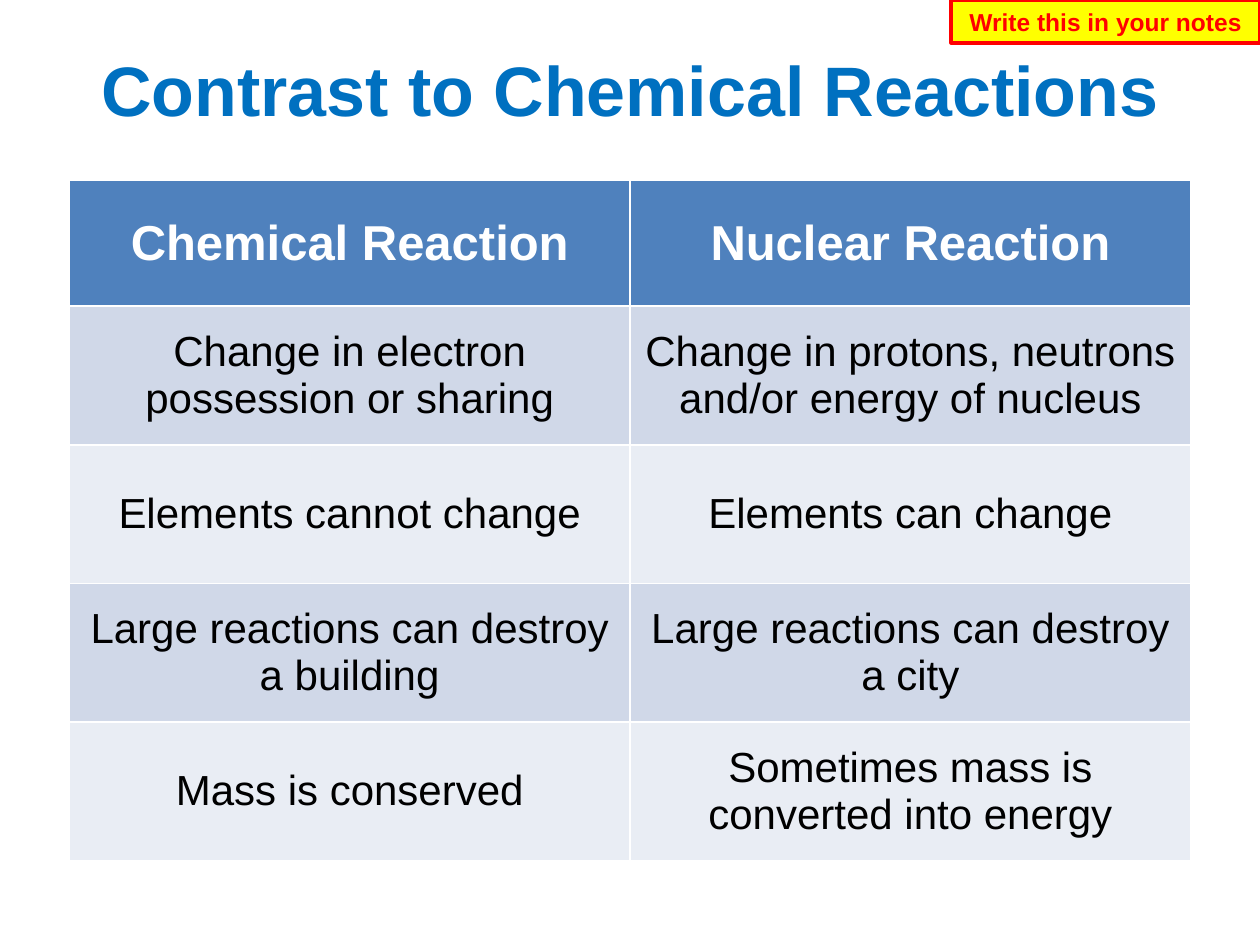
from pptx import Presentation
from pptx.dml.color import RGBColor
from pptx.enum.shapes import MSO_SHAPE
from pptx.enum.text import MSO_ANCHOR, PP_ALIGN
from pptx.util import Inches, Pt

RECT = MSO_SHAPE.RECTANGLE
MIDDLE = MSO_ANCHOR.MIDDLE
CENTER = PP_ALIGN.CENTER
TITLE_ONLY = 5

COLORS = {
    "title": "0070C0", "head": "4F81BD", "odd": "D0D8E8", "even": "E9EDF4",
    "white": "FFFFFF", "black": "000000", "yellow": "FFFF00", "red": "FF0000",
}
ROWS = [
    ("Chemical Reaction", "Nuclear Reaction"),
    ("Change in electron possession or sharing",
     "Change in protons, neutrons and/or energy of nucleus"),
    ("Elements cannot change", "Elements can change"),
    ("Large reactions can destroy a building",
     "Large reactions can destroy a city"),
    ("Mass is conserved", "Sometimes mass is converted into energy"),
]


def color(name):
    return RGBColor.from_string(COLORS[name])


def write(frame, text, size, ink, bold):
    frame.text = text
    frame.word_wrap = True
    frame.vertical_anchor = MIDDLE
    para = frame.paragraphs[0]
    para.alignment = CENTER
    font = para.font
    font.name, font.size, font.bold = "Arial", Pt(size), bold
    font.color.rgb = color(ink)


deck = Presentation()
deck.slide_width, deck.slide_height = Inches(10), Inches(7.5)
slide = deck.slides.add_slide(deck.slide_layouts[TITLE_ONLY])

# Title
title = slide.shapes.title
title.left, title.top = Inches(0.2), Inches(0.3)
title.width, title.height = Inches(9.6), Inches(0.8)
write(title.text_frame, "Contrast to Chemical Reactions", 40, "title", True)

# Comparison table: one header row, then banded rows of equal height
table = slide.shapes.add_table(
    len(ROWS), 2, Inches(0.55), Inches(1.43), Inches(8.9), Inches(5.4)).table
for r, texts in enumerate(ROWS):
    head = r == 0
    band = "head" if head else "odd" if r % 2 else "even"
    table.rows[r].height = Inches(1 if head else 1.1)
    for c, text in enumerate(texts):
        cell = table.cell(r, c)
        cell.fill.solid()
        cell.fill.fore_color.rgb = color(band)
        write(cell.text_frame, text, 28 if head else 24,
              "white" if head else "black", head)
        cell.vertical_anchor = MIDDLE

# Reminder in the top right corner
note = slide.shapes.add_shape(
    RECT, Inches(7.55), 0, Inches(2.45), Inches(0.34))
note.shadow.inherit = False
note.fill.solid()
note.fill.fore_color.rgb = color("yellow")
note.line.color.rgb = color("red")
note.line.width = Pt(2.25)
write(note.text_frame, "Write this in your notes", 14, "red", True)

deck.save("out.pptx")
